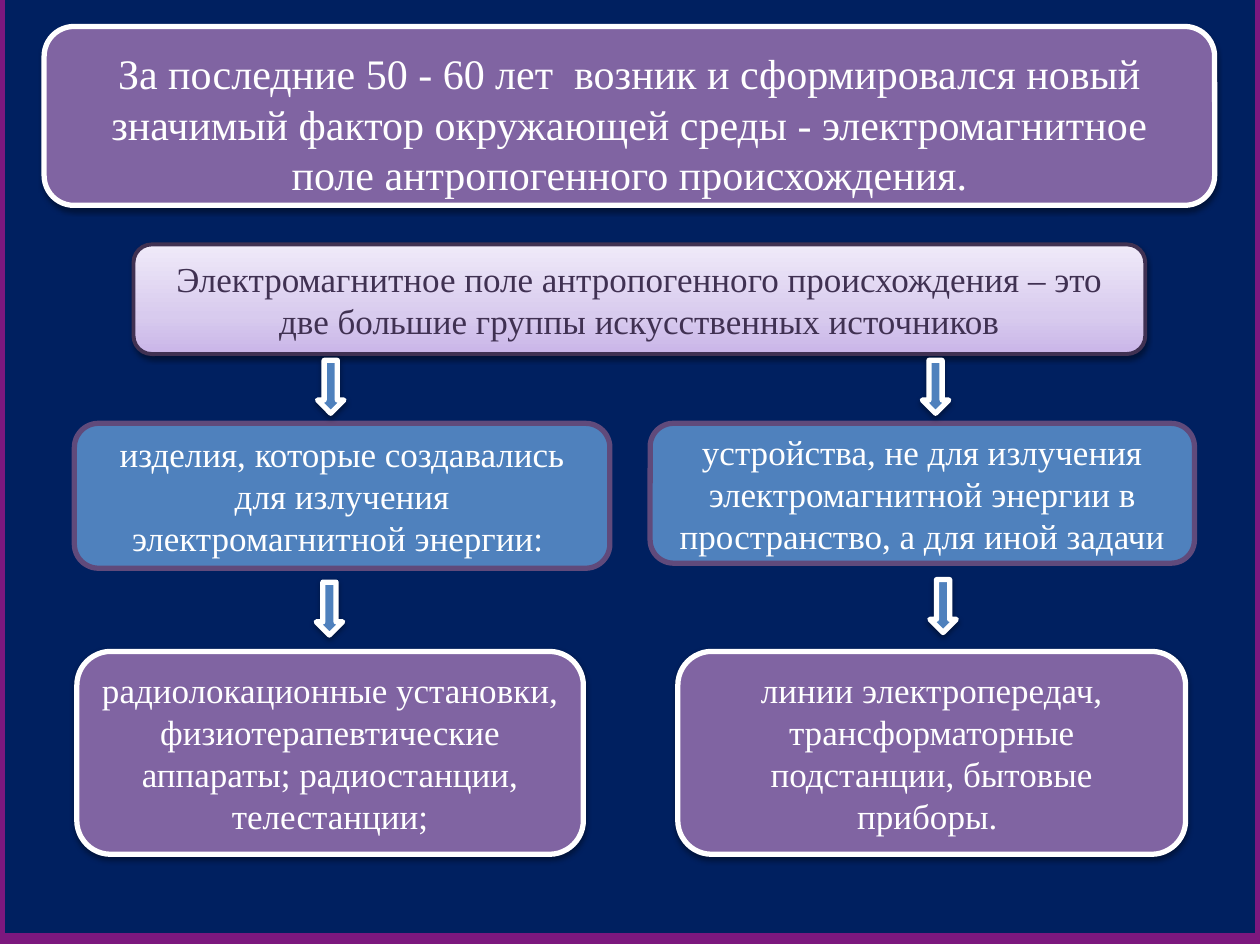
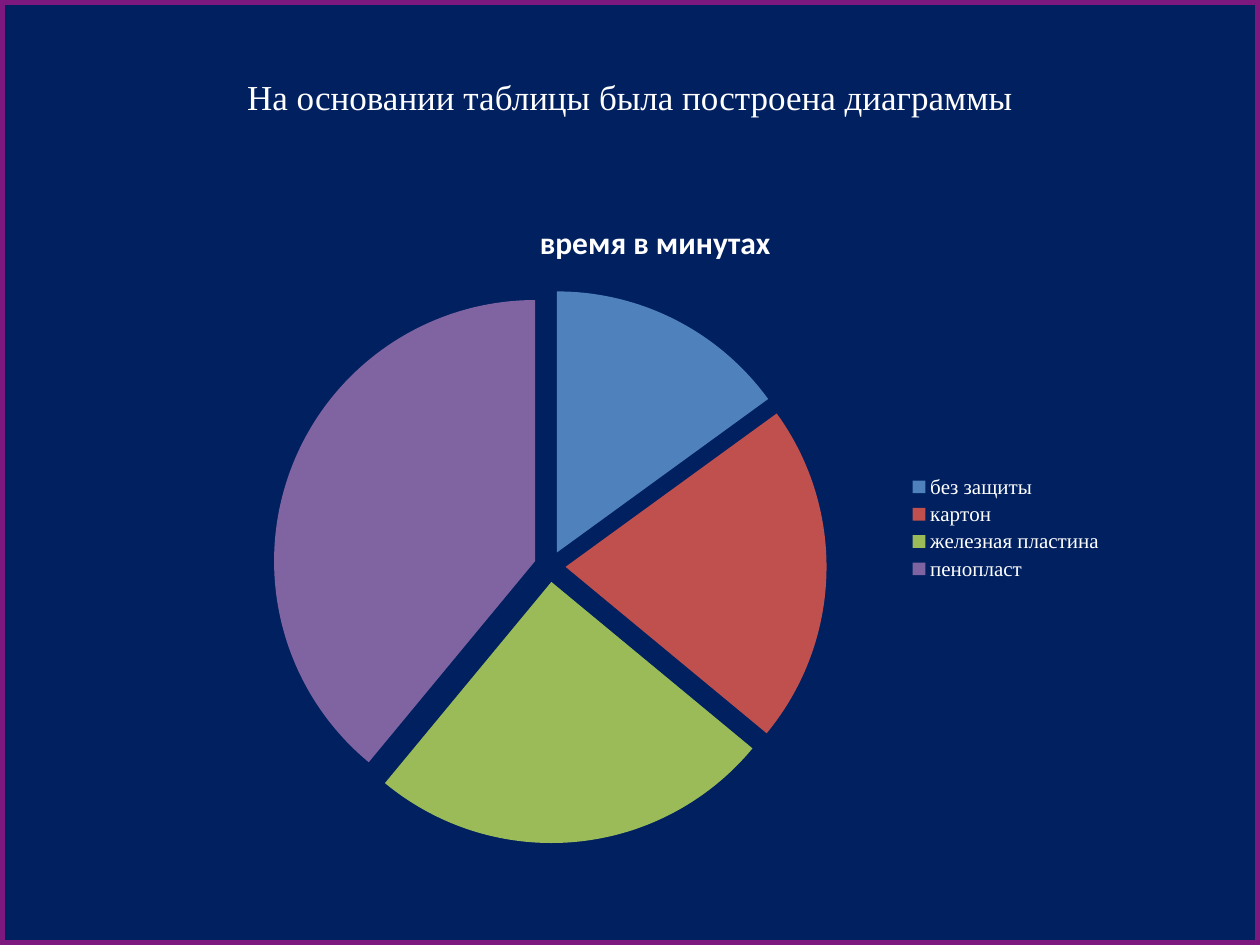
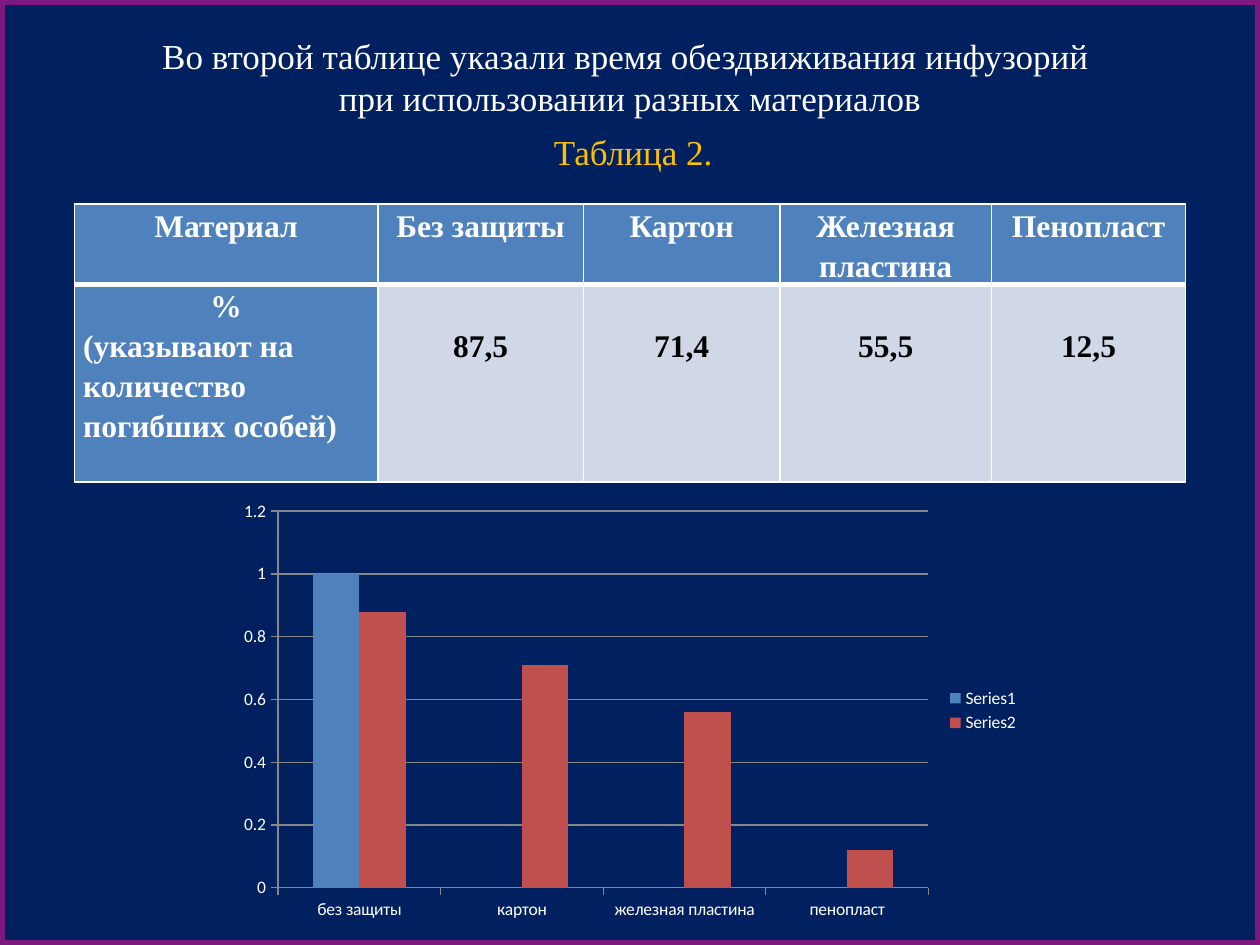
from dataclasses import dataclass

from lxml.etree import SubElement
from pptx import Presentation
from pptx.chart.chart import Chart
from pptx.chart.data import CategoryChartData
from pptx.dml.color import RGBColor
from pptx.enum.chart import XL_CHART_TYPE, XL_LEGEND_POSITION, XL_TICK_MARK
from pptx.enum.shapes import MSO_SHAPE
from pptx.enum.text import MSO_ANCHOR, PP_ALIGN
from pptx.oxml.ns import qn
from pptx.shapes.autoshape import Shape
from pptx.slide import Slide
from pptx.table import _Cell
from pptx.text.text import Font, TextFrame
from pptx.util import Inches, Pt


@dataclass(frozen=True)
class Theme:
    navy: str = "002060"
    magenta: str = "7C187E"
    white: str = "FFFFFF"
    black: str = "000000"
    gold: str = "FFC000"
    blue: str = "4F81BD"
    red: str = "C0504D"
    green: str = "9BBB59"
    purple: str = "8064A2"
    plum: str = "604A7B"
    dark_plum: str = "403152"
    pale_blue: str = "D0D8E8"
    grid_grey: str = "878787"
    lilac_stops: tuple[tuple[int, str], ...] = ((0, "C9B5E8"), (35, "D8CBEE"), (100, "F0EAF9"))
    text_font: str = "Times New Roman"
    chart_font: str = "Calibri"
    banner_size: int = 24
    body_size: int = 20
    table_size: int = 18
    legend_size: int = 12
    axis_size: int = 10


THEME = Theme()
MATERIALS = ["без защиты", "картон", "железная пластина", "пенопласт"]


@dataclass(frozen=True)
class Place:
    left: float
    top: float
    width: float
    height: float

    def lengths(self) -> tuple[int, int, int, int]:
        return Inches(self.left), Inches(self.top), Inches(self.width), Inches(self.height)


@dataclass(frozen=True)
class Panel:
    place: Place
    text: str
    fill: str | None
    line: str
    line_width: float = 3
    shadow: bool = True
    color: str = THEME.white
    size: int = THEME.body_size
    top_margin: float | None = None


PANELS = [
    Panel(Place(0.35, 0.21, 9.29, 1.42),
          "За последние 50 - 60 лет  возник и сформировался новый значимый фактор "
          "окружающей среды - электромагнитное поле антропогенного происхождения.",
          THEME.purple, THEME.white, size=THEME.banner_size, top_margin=0.1),
    Panel(Place(1.06, 1.94, 8.03, 0.87),
          "Электромагнитное поле антропогенного происхождения – это две большие группы "
          "искусственных источников",
          None, THEME.dark_plum, line_width=2.25, color=THEME.dark_plum),
    Panel(Place(0.59, 3.36, 4.25, 1.15),
          "изделия, которые создавались для излучения электромагнитной энергии: ",
          THEME.blue, THEME.plum, shadow=False),
    Panel(Place(5.16, 3.36, 4.32, 1.11),
          "устройства, не для излучения электромагнитной энергии в пространство, "
          "а для иной задачи",
          THEME.blue, THEME.plum, shadow=False),
    Panel(Place(0.61, 5.17, 4.02, 1.61),
          "радиолокационные установки, физиотерапевтические аппараты; радиостанции, "
          "телестанции;",
          THEME.purple, THEME.white),
    Panel(Place(5.38, 5.17, 4.03, 1.61),
          "линии электропередач, трансформаторные подстанции, бытовые приборы. ",
          THEME.purple, THEME.white),
]
ARROW_CORNERS = [(2.52, 2.86), (7.32, 2.86), (2.51, 4.62), (7.38, 4.6)]


def rgb(color: str) -> RGBColor:
    return RGBColor.from_string(color)


def style_font(font: Font, size: float, color: str,
               name: str = THEME.text_font, bold: bool = False) -> None:
    font.name, font.size, font.bold = name, Pt(size), bold
    font.color.rgb = rgb(color)


def write_lines(frame: TextFrame, lines: list[str], size: float, color: str,
                bold: bool = False, spacing: float | None = None) -> None:
    for index, line in enumerate(lines):
        para = frame.paragraphs[0] if index == 0 else frame.add_paragraph()
        para.alignment = PP_ALIGN.CENTER
        para.line_spacing = spacing
        span = para.add_run()
        span.text = line
        style_font(span.font, size, color, bold=bold)


def add_color(parent, color: str):
    return SubElement(parent, qn("a:srgbClr"), val=color)


def drop_shadow(shape: Shape) -> None:
    effects = shape._element.spPr.find(qn("a:effectLst"))
    shadow = SubElement(effects, qn("a:outerShdw"), blurRad="40000", dist="20000",
                        dir="5400000", rotWithShape="0")
    SubElement(add_color(shadow, THEME.black), qn("a:alpha"), val="38000")


def fill_lilac(shape: Shape) -> None:
    shape.fill.gradient()
    shape.fill.gradient_angle = 90
    stops = shape._element.spPr.find(".//" + qn("a:gsLst"))
    for stop in list(stops):
        stops.remove(stop)
    for position, color in THEME.lilac_stops:
        add_color(SubElement(stops, qn("a:gs"), pos=str(position * 1000)), color)


def add_block(slide: Slide, kind: MSO_SHAPE, place: Place, fill: str | None,
              line: str, line_width: float = 3, shadow: bool = True) -> Shape:
    """Add a preset shape; without a fill colour it gets the lilac gradient."""
    block = slide.shapes.add_shape(kind, *place.lengths())
    block.shadow.inherit = False
    if fill:
        block.fill.solid()
        block.fill.fore_color.rgb = rgb(fill)
    else:
        fill_lilac(block)
    block.line.color.rgb = rgb(line)
    block.line.width = Pt(line_width)
    if shadow:
        drop_shadow(block)
    return block


def add_framed_slide(deck: Presentation, top: float = 0) -> tuple[Slide, Shape]:
    slide = deck.slides.add_slide(deck.slide_layouts[6])
    frame = add_block(slide, MSO_SHAPE.RECTANGLE, Place(0, top, 10, 7.5),
                      THEME.navy, THEME.magenta, 6, shadow=False)
    return slide, frame


def add_heading(frame: Shape, lines: list[str], top: float) -> None:
    text = frame.text_frame
    text.vertical_anchor = MSO_ANCHOR.TOP
    text.margin_top = Inches(top)
    write_lines(text, lines, THEME.body_size, THEME.white)


def add_panel(slide: Slide, panel: Panel) -> None:
    box = add_block(slide, MSO_SHAPE.ROUNDED_RECTANGLE, panel.place, panel.fill,
                    panel.line, panel.line_width, panel.shadow)
    text = box.text_frame
    text.word_wrap = True
    text.vertical_anchor = MSO_ANCHOR.MIDDLE
    if panel.top_margin is not None:
        text.vertical_anchor = MSO_ANCHOR.TOP
        text.margin_top = Inches(panel.top_margin)
    write_lines(text, [panel.text], panel.size, panel.color)


def add_chart(slide: Slide, kind: XL_CHART_TYPE, place: Place,
              series: dict[str, list[float | None]]) -> Chart:
    data = CategoryChartData()
    data.categories = MATERIALS
    for name, values in series.items():
        data.add_series(name, values)
    chart = slide.shapes.add_chart(kind, *place.lengths(), data).chart
    style_font(chart.font, THEME.axis_size, THEME.white, THEME.chart_font)
    chart.has_legend = True
    chart.legend.position = XL_LEGEND_POSITION.RIGHT
    chart.legend.include_in_layout = False
    return chart


def build_sources_slide(deck: Presentation) -> None:
    slide, _ = add_framed_slide(deck, top=-0.05)
    for panel in PANELS:
        add_panel(slide, panel)
    for left, top in ARROW_CORNERS:
        add_block(slide, MSO_SHAPE.DOWN_ARROW, Place(left, top, 0.21, 0.42),
                  THEME.blue, THEME.white)


def build_pie_slide(deck: Presentation) -> None:
    slide, frame = add_framed_slide(deck)
    add_heading(frame, ["На основании таблицы была построена диаграммы"], 0.6)
    title = "время в минутах"
    chart = add_chart(slide, XL_CHART_TYPE.PIE, Place(1.54, 1.55, 7.32, 5.28),
                      {title: [15, 21, 25, 39]})
    chart.has_title = True
    span = chart.chart_title.text_frame.paragraphs[0].add_run()
    span.text = title
    style_font(span.font, 18, THEME.white, THEME.chart_font, bold=True)
    style_font(chart.legend.font, THEME.legend_size, THEME.white)

    plot = chart.plots[0]
    plot.vary_by_categories = True
    pie = plot.series[0]
    for index, color in enumerate((THEME.blue, THEME.red, THEME.green, THEME.purple)):
        fill = pie.points[index].format.fill
        fill.solid()
        fill.fore_color.rgb = rgb(color)
    explosion = SubElement(pie._element, qn("c:explosion"), val="6")
    pie._element.find(qn("c:dPt")).addprevious(explosion)


def style_cell(cell: _Cell, fill: str, top_line: float, bottom_line: float) -> None:
    cell.margin_left = cell.margin_right = Inches(0.07)
    cell.margin_top = cell.margin_bottom = 0
    properties = cell._tc.get_or_add_tcPr()
    for side, width in (("L", 1), ("R", 1), ("T", top_line), ("B", bottom_line)):
        edge = SubElement(properties, qn(f"a:ln{side}"), w=str(Pt(width)))
        add_color(SubElement(edge, qn("a:solidFill")), THEME.white)
    cell.fill.solid()
    cell.fill.fore_color.rgb = rgb(fill)


def add_survival_table(slide: Slide) -> None:
    rows = [
        [["Материал"], ["Без защиты"], ["Картон"], ["Железная пластина"], ["Пенопласт"]],
        [["%", "(указывают на количество погибших особей)"],
         ["87,5"], ["71,4"], ["55,5"], ["12,5"]],
    ]
    place = Place(0.59, 1.62, 8.82, 2.2)
    table = slide.shapes.add_table(2, 5, *place.lengths()).table
    table.first_row = table.horz_banding = False
    for column, width in zip(table.columns, (2.41, 1.63, 1.56, 1.68, 1.54)):
        column.width = Inches(width)
    for row, height in zip(table.rows, (0.63, 1.57)):
        row.height = Inches(height)
    for row_index, row in enumerate(rows):
        for column_index, lines in enumerate(row):
            cell = table.cell(row_index, column_index)
            is_value = row_index == 1 and column_index > 0
            style_cell(cell, THEME.pale_blue if is_value else THEME.blue,
                       *((1, 3) if row_index == 0 else (3, 1)))
            if is_value:
                cell.margin_top = Inches(0.32)
            write_lines(cell.text_frame, lines, THEME.table_size,
                        THEME.black if is_value else THEME.white, bold=True, spacing=1.15)
    table.cell(1, 0).text_frame.paragraphs[1].alignment = PP_ALIGN.LEFT


def add_survival_chart(slide: Slide) -> None:
    chart = add_chart(slide, XL_CHART_TYPE.COLUMN_CLUSTERED, Place(1.81, 3.91, 6.38, 3.46),
                      {"Series1": [1, None, None, None],
                       "Series2": [0.88, 0.71, 0.56, 0.12]})
    chart.has_title = False
    style_font(chart.legend.font, THEME.axis_size, THEME.white, THEME.chart_font)
    plot = chart.plots[0]
    plot.vary_by_categories = False
    plot.gap_width = 150
    plot.overlap = 0
    for series, color in zip(plot.series, (THEME.blue, THEME.red)):
        series.format.fill.solid()
        series.format.fill.fore_color.rgb = rgb(color)
    scale = chart.value_axis
    scale.minimum_scale, scale.maximum_scale, scale.major_unit = 0, 1.2, 0.2
    scale.has_major_gridlines = True
    for axis in (chart.category_axis, scale):
        axis.major_tick_mark = XL_TICK_MARK.OUTSIDE
        style_font(axis.tick_labels.font, THEME.axis_size, THEME.white, THEME.chart_font)
    for ruled in (chart.category_axis, scale, scale.major_gridlines):
        ruled.format.line.color.rgb = rgb(THEME.grid_grey)
        ruled.format.line.width = Pt(0.75)


def build_table_slide(deck: Presentation) -> None:
    slide, frame = add_framed_slide(deck)
    add_heading(frame, ["Во второй таблице указали время обездвиживания инфузорий ",
                        "при использовании разных материалов"], 0.27)
    add_survival_chart(slide)
    add_survival_table(slide)
    caption = slide.shapes.add_textbox(*Place(4.24, 0.99, 1.57, 0.44).lengths())
    caption.text_frame.word_wrap = True
    write_lines(caption.text_frame, ["Таблица 2."], THEME.body_size, THEME.gold)


def main() -> None:
    deck = Presentation()
    deck.slide_width, deck.slide_height = Inches(10), Inches(7.5)
    build_sources_slide(deck)
    build_pie_slide(deck)
    build_table_slide(deck)
    deck.save("out.pptx")


if __name__ == "__main__":
    main()
